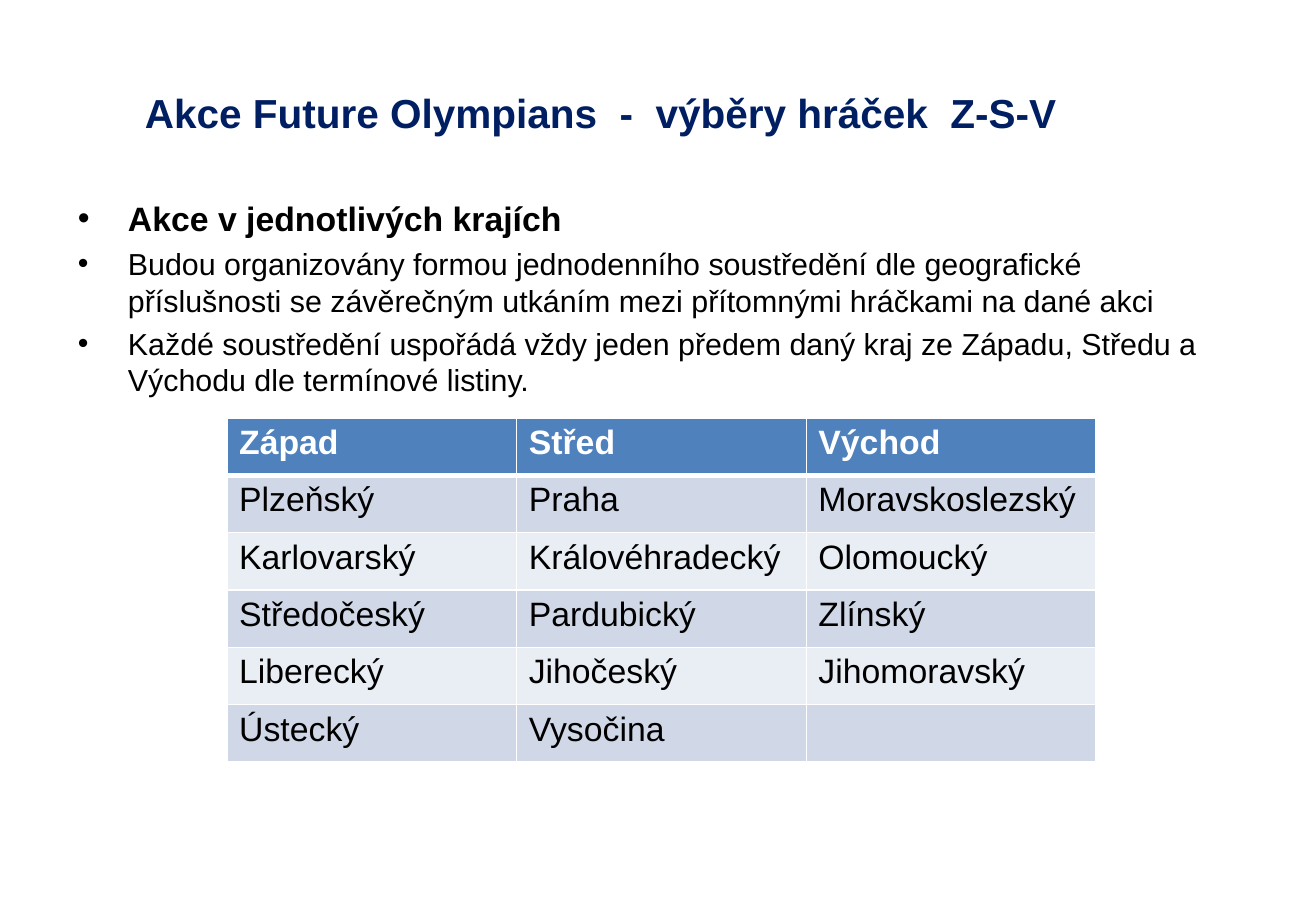
"""Build the slide on regional player selection events."""
import lxml.etree
import pptx
import pptx.dml.color
import pptx.enum.text
import pptx.oxml.ns
import pptx.util

PX = 7526
NAVY = pptx.dml.color.RGBColor(0x00, 0x1E, 0x62)
BLACK = pptx.dml.color.RGBColor(0x00, 0x00, 0x00)
WHITE = pptx.dml.color.RGBColor(0xFF, 0xFF, 0xFF)
HEADER_BLUE = pptx.dml.color.RGBColor(0x4F, 0x81, 0xBD)
BAND_DARK = pptx.dml.color.RGBColor(0xD0, 0xD8, 0xE8)
BAND_LIGHT = pptx.dml.color.RGBColor(0xE9, 0xED, 0xF4)
qn = pptx.oxml.ns.qn


def add_span(para, text, size, color, bold):
    span = para.add_run()
    span.text = text
    span.font.name = "Arial"
    span.font.size = pptx.util.Pt(size)
    span.font.bold = bold
    span.font.color.rgb = color


def add_border(cell, side, points):
    line = lxml.etree.SubElement(cell._tc.get_or_add_tcPr(), qn("a:" + side))
    line.set("w", str(pptx.util.Pt(points)))
    fill = lxml.etree.SubElement(line, qn("a:solidFill"))
    lxml.etree.SubElement(fill, qn("a:srgbClr")).set("val", str(WHITE))


deck = pptx.Presentation()
deck.slide_width = 1316 * PX
deck.slide_height = 911 * PX
page = deck.slides.add_slide(deck.slide_layouts[6])

title_box = page.shapes.add_textbox(133 * PX, 36 * PX, 984 * PX, 152 * PX)
title_box.text_frame.word_wrap = True
title_box.text_frame.vertical_anchor = pptx.enum.text.MSO_ANCHOR.MIDDLE
add_span(title_box.text_frame.paragraphs[0],
         "Akce Future Olympians  -  výběry hráček  Z-S-V", 24, NAVY, True)

body_box = page.shapes.add_textbox(66 * PX, 192 * PX, 1185 * PX, 217 * PX)
body = body_box.text_frame
body.word_wrap = True
bullets = [
    ("Akce v jednotlivých krajích", 20, True),
    ("Budou organizovány formou jednodenního soustředění dle geografické "
     "příslušnosti se závěrečným utkáním mezi přítomnými hráčkami na dané akci", 18, False),
    ("Každé soustředění uspořádá vždy jeden předem daný kraj ze Západu, Středu a "
     "Východu dle termínové listiny.", 18, False),
]
for index, (text, size, bold) in enumerate(bullets):
    para = body.add_paragraph() if index else body.paragraphs[0]
    properties = para._p.get_or_add_pPr()
    properties.set("marL", str(50 * PX))
    properties.set("indent", str(-50 * PX))
    lxml.etree.SubElement(properties, qn("a:buFont")).set("typeface", "Arial")
    lxml.etree.SubElement(properties, qn("a:buChar")).set("char", "•")
    if index:
        para.space_before = pptx.util.Pt(4)
    add_span(para, text, size, BLACK, bold)

regions = [
    ("Západ", "Střed", "Východ"),
    ("Plzeňský", "Praha", "Moravskoslezský"),
    ("Karlovarský", "Královéhradecký", "Olomoucký"),
    ("Středočeský", "Pardubický", "Zlínský"),
    ("Liberecký", "Jihočeský", "Jihomoravský"),
    ("Ústecký", "Vysočina", ""),
]
table = page.shapes.add_table(len(regions), 3, 227 * PX, 418 * PX, 869 * PX, 344 * PX).table
for row, names in enumerate(regions):
    header = row == 0
    for column, name in enumerate(names):
        cell = table.cell(row, column)
        add_border(cell, "lnL", 1)
        add_border(cell, "lnR", 1)
        add_border(cell, "lnT", 3 if row == 1 else 1)
        add_border(cell, "lnB", 3 if header else 1)
        cell.fill.solid()
        cell.fill.fore_color.rgb = HEADER_BLUE if header else BAND_DARK if row % 2 else BAND_LIGHT
        if name:
            add_span(cell.text_frame.paragraphs[0], name, 20, WHITE if header else BLACK, header)

deck.save("out.pptx")
